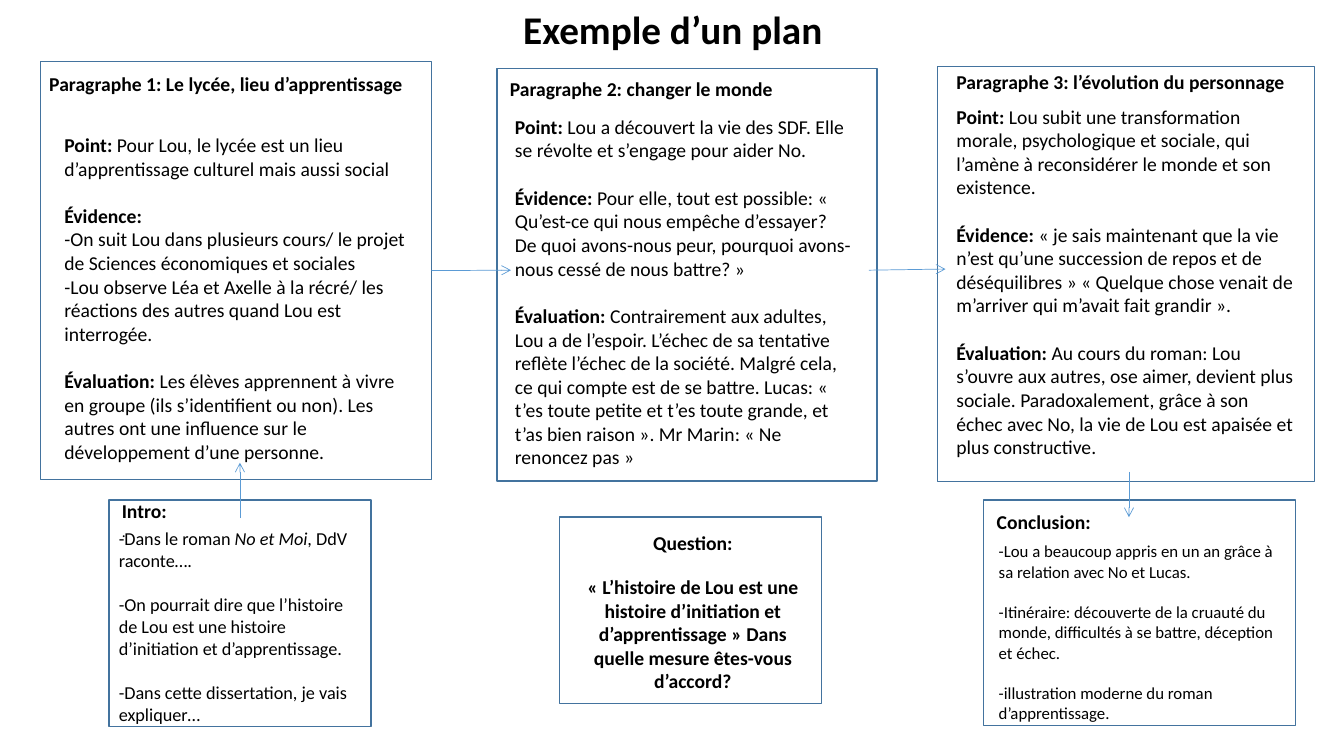
import pptx
import pptx.util
import pptx.dml.color
import pptx.enum.shapes
import pptx.enum.text
import pptx.oxml
import pptx.oxml.ns
from dataclasses import dataclass

Pt = pptx.util.Pt
Rgb = pptx.dml.color.RGBColor.from_string
Align = pptx.enum.text.PP_ALIGN
Fit = pptx.enum.text.MSO_AUTO_SIZE


@dataclass
class Theme:
    font: str = "Calibri"
    ink: str = "000000"
    edge: str = "43739E"
    arrow: str = "5B9BD5"
    title: int = 28
    main: int = 14
    intro: int = 13
    small: int = 12
    dot: int = 11
    line: float = 1.22


theme = Theme()

deck = pptx.Presentation()
deck.slide_width, deck.slide_height = Pt(960), Pt(540)
slide = deck.slides.add_slide(deck.slide_layouts[5])
shapes = slide.shapes


def style(para, size, bold=False):
    font = para.font
    font.name, font.size, font.bold = theme.font, Pt(size), bold
    font.color.rgb = Rgb(theme.ink)


def write(place, groups, size, bold=False, mark="bold", align=Align.LEFT, gap=None):
    frame = shapes.add_textbox(*map(Pt, place)).text_frame
    frame.word_wrap = True
    frame.auto_size = Fit.SHAPE_TO_FIT_TEXT
    para = None
    for group in groups:
        for spot, text in enumerate(group):
            first = para is None
            para = frame.paragraphs[0] if first else frame.add_paragraph()
            para.alignment = align
            if spot == 0 and not first:
                para.space_before = Pt(round((gap or size) * theme.line, 1))
            style(para, size, bold)
            for part, piece in enumerate(text.split("*")):
                if piece:
                    run = para.add_run()
                    run.text = piece
                    if part % 2:
                        setattr(run.font, mark, True)
    return frame


title = shapes.title
title.left, title.top, title.width, title.height = map(Pt, (366.5, 0, 231.8, 41))
frame = title.text_frame
frame.text = "Exemple d’un plan"
frame.word_wrap = False
frame.auto_size = Fit.NONE
frame.vertical_anchor = pptx.enum.text.MSO_ANCHOR.TOP
frame.paragraphs[0].alignment = Align.LEFT
style(frame.paragraphs[0], theme.title, True)

places = {
    "question": (399.6, 369.4, 187.2, 133.2),
    "end": (702.7, 357.1, 222.5, 161.3),
    "intro": (77.8, 357.1, 187.2, 162),
    "third": (669.6, 47.5, 269.3, 296.6),
    "second": (355, 49, 271.4, 294.5),
    "first": (28.8, 43.9, 279.4, 298.8),
}
boxes = {}
for name, place in places.items():
    box = shapes.add_shape(pptx.enum.shapes.MSO_SHAPE.RECTANGLE, *map(Pt, place))
    box.shadow.inherit = False
    box.fill.background()
    box.line.color.rgb = Rgb(theme.edge)
    box.line.width = Pt(1)
    boxes[name] = box

arrows = [
    (171.4, 370.1, 171.4, 330.5, None),
    (308.2, 193.3, 365, 193, "first"),
    (620.6, 193, 675.4, 192.2, None),
    (806.4, 337, 806.4, 369.4, None),
]
for *ends, start in arrows:
    arrow = shapes.add_connector(pptx.enum.shapes.MSO_CONNECTOR.STRAIGHT, *map(Pt, ends))
    if start:
        arrow.begin_connect(boxes[start], 3)
    arrow.line.color.rgb = Rgb(theme.arrow)
    arrow.line.width = Pt(0.5)
    tail = pptx.oxml.parse_xml(f'<a:tailEnd {pptx.oxml.ns.nsdecls("a")} type="arrow"/>')
    arrow.line._get_or_add_ln().append(tail)
    flat = pptx.oxml.parse_xml(f'<a:effectLst {pptx.oxml.ns.nsdecls("a")}/>')
    arrow._element.spPr.append(flat)

write((406.1, 375.8, 177.8, 123.8), [
    ["Question:"],
    ["« L’histoire de Lou est une histoire d’initiation et d’apprentissage » "
     "Dans quelle mesure êtes-vous d’accord?"],
], theme.main, bold=True, align=Align.CENTER, gap=theme.small)

heads = [
    ((28.1, 47.5, 280.1, 24.5), "Paragraphe 1: Le lycée, lieu d’apprentissage"),
    ((357.1, 51.1, 265.7, 24.5), "Paragraphe 2: changer le monde"),
    ((676.1, 46.1, 269.3, 24.5), "Paragraphe 3: l’évolution du personnage"),
    ((704.9, 360.7, 216, 24.5), "Conclusion:"),
]
for place, text in heads:
    write(place, [[text]], theme.main, bold=True)

frame = write((79.9, 352.8, 184.3, 37.4), [["Intro:", "."]], theme.main, bold=True)
style(frame.paragraphs[1], theme.dot)

bodies = [
    ((38.9, 91.4, 260.6, 266.4), [
        ["*Point: *Pour Lou, le lycée est un lieu d’apprentissage culturel mais aussi social"],
        ["*Évidence:*",
         "-On suit Lou dans plusieurs cours/ le projet de Sciences économiques et sociales",
         "-Lou observe Léa et Axelle à la récré/ les réactions des autres quand Lou est interrogée."],
        ["*Évaluation: *Les élèves apprennent à vivre en groupe (ils s’identifient ou non). "
         "Les autres ont une influence sur le développement d’une personne."],
    ]),
    ((360.7, 78.5, 255.6, 262.1), [
        ["*Point: *Lou a découvert la vie des SDF. Elle se révolte et s’engage pour aider No."],
        ["*Évidence: *Pour elle, tout est possible: « Qu’est-ce qui nous empêche d’essayer? "
         "De quoi avons-nous peur, pourquoi avons-nous cessé de nous battre? »"],
        ["*Évaluation: *Contrairement aux adultes, Lou a de l’espoir. L’échec de sa tentative "
         "reflète l’échec de la société. Malgré cela, ce qui compte est de se battre. "
         "Lucas: « t’es toute petite et t’es toute grande, et t’as bien raison ». "
         "Mr Marin: « Ne renoncez pas »"],
    ]),
    ((676.1, 71.3, 257, 262.1), [
        ["*Point: *Lou subit une transformation morale, psychologique et sociale, "
         "qui l’amène à reconsidérer le monde et son existence."],
        ["*Évidence: *« je sais maintenant que la vie n’est qu’une succession de repos et de "
         "déséquilibres » « Quelque chose venait de m’arriver qui m’avait fait grandir »."],
        ["*Évaluation: *Au cours du roman: Lou s’ouvre aux autres, ose aimer, devient plus "
         "sociale. Paradoxalement, grâce à son échec avec No, la vie de Lou est apaisée "
         "et plus constructive."],
    ]),
]
for place, groups in bodies:
    write(place, groups, theme.main)

write((706.3, 383, 218.9, 138.2), [
    ["-Lou a beaucoup appris en un an grâce à sa relation avec No et Lucas."],
    ["-Itinéraire: découverte de la cruauté du monde, difficultés à se battre, déception et échec."],
    ["-illustration moderne du roman d’apprentissage."],
], theme.small)

write((77.8, 373, 182.9, 149), [
    ["-Dans le roman *No et Moi*, DdV raconte…."],
    ["-On pourrait dire que l’histoire de Lou est une histoire d’initiation et d’apprentissage."],
    ["-Dans cette dissertation, je vais expliquer…"],
], theme.intro, mark="italic")

deck.save("out.pptx")
